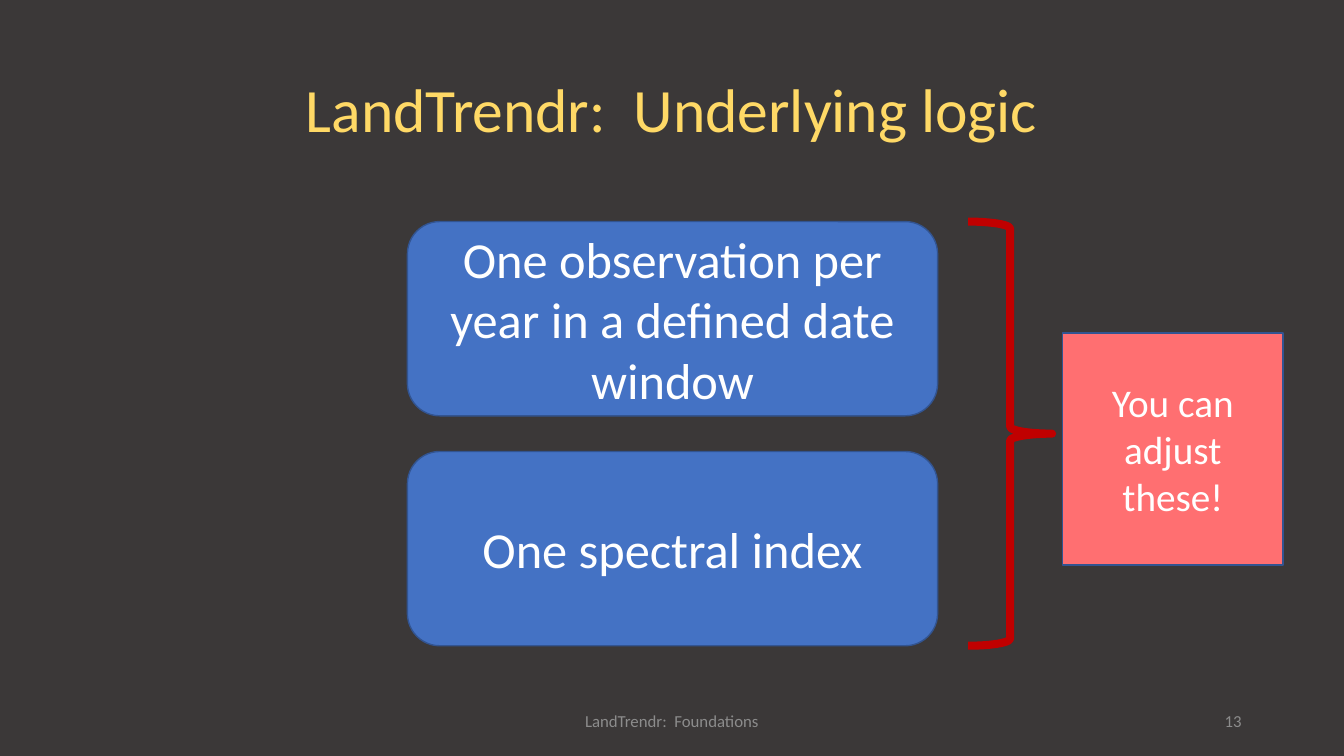
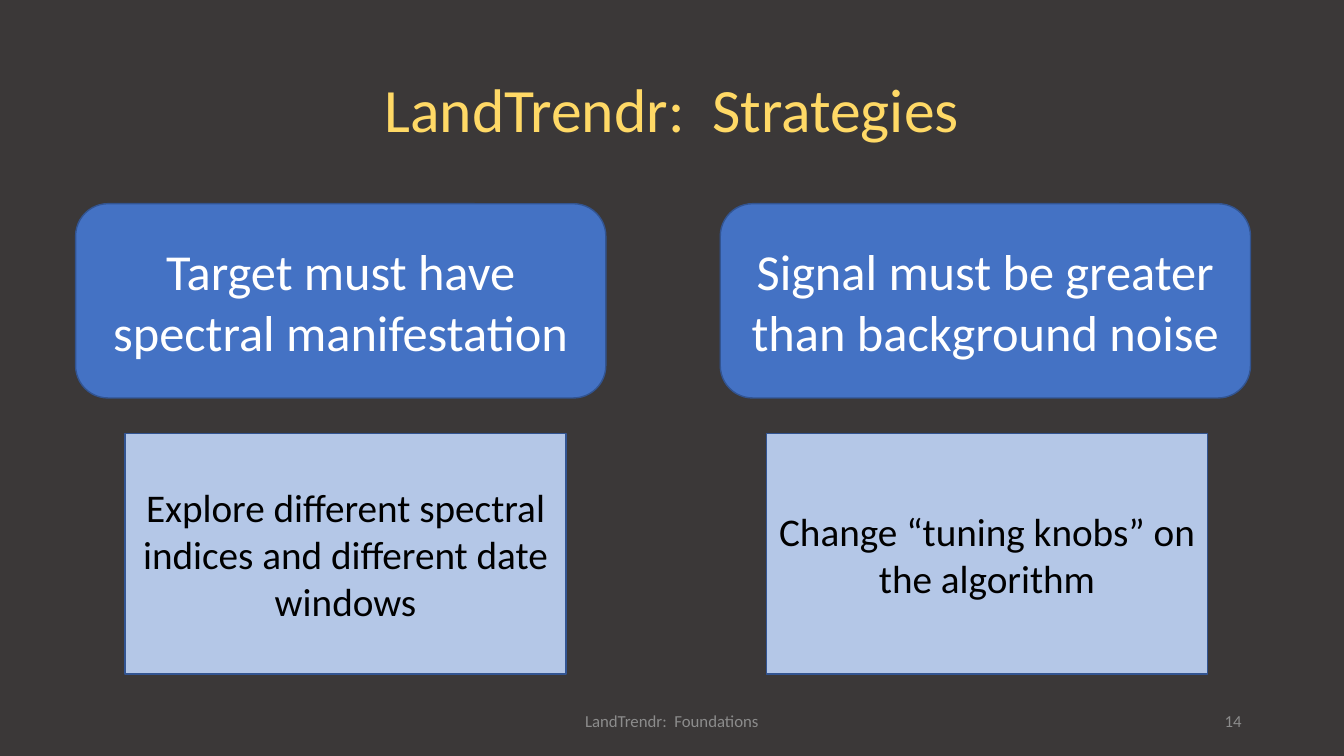
"""Build two LandTrendr slides: underlying logic and strategies."""
import dataclasses

import pptx
import pptx.dml.color
import pptx.enum.shapes
import pptx.enum.text
import pptx.util

EMU_PER_PX = 9525
SHAPE = pptx.enum.shapes.MSO_SHAPE
ALIGN = pptx.enum.text.PP_ALIGN
TITLE_ONLY_LAYOUT = 5
FIRST_NUMBER = 13
CARD_WIDTH, CARD_HEIGHT, CARD_GAP = 505, 185, 34
ADVICE_WIDTH, ADVICE_HEIGHT = 420, 229


@dataclasses.dataclass(frozen=True)
class Theme:
    """Hold the colours, font and type sizes of the slides."""
    font: str = "Calibri"
    background: str = "3B3838"
    title: str = "FFD966"
    footer: str = "8C8C8C"
    card: str = "4472C4"
    outline: str = "325491"
    advice: str = "B4C7E7"
    callout: str = "FF6F71"
    brace: str = "C00000"
    light_text: str = "FFFFFF"
    dark_text: str = "000000"
    title_size: int = 44
    card_size: int = 36
    note_size: int = 28
    footer_size: int = 12
    outline_width: float = 1
    brace_width: float = 5.75


THEME = Theme()


def px(length):
    """Turn pixels into EMU."""
    return pptx.util.Emu(length * EMU_PER_PX)


def rgb(value):
    """Turn a hex string into a colour."""
    return pptx.dml.color.RGBColor.from_string(value)


def write_text(shape, text, *, size, color, align=ALIGN.CENTER, line_spacing=None):
    """Write one formatted, vertically centred paragraph into a shape."""
    frame = shape.text_frame
    frame.word_wrap = True
    frame.vertical_anchor = pptx.enum.text.MSO_ANCHOR.MIDDLE
    paragraph = frame.paragraphs[0]
    paragraph.alignment = align
    paragraph.line_spacing = line_spacing
    run = paragraph.add_run()
    run.text = text
    run.font.name = THEME.font
    run.font.size = pptx.util.Pt(size)
    run.font.color.rgb = rgb(color)


def add_shape(slide, kind, box, *, line, line_width, fill=None):
    """Add a preset shape without a shadow."""
    shape = slide.shapes.add_shape(kind, *map(px, box))
    shape.shadow.inherit = False
    if fill:
        shape.fill.solid()
        shape.fill.fore_color.rgb = rgb(fill)
    else:
        shape.fill.background()
    shape.line.color.rgb = rgb(line)
    shape.line.width = pptx.util.Pt(line_width)
    return shape


def add_card(slide, left, top, text):
    """Add a rounded card with a key statement."""
    card = add_shape(slide, SHAPE.ROUNDED_RECTANGLE, (left, top, CARD_WIDTH, CARD_HEIGHT),
                     fill=THEME.card, line=THEME.outline, line_width=THEME.outline_width)
    write_text(card, text, size=THEME.card_size, color=THEME.light_text)


def add_note(slide, box, text, *, fill, color):
    """Add a rectangular note."""
    note = add_shape(slide, SHAPE.RECTANGLE, box, fill=fill, line=THEME.outline,
                     line_width=THEME.outline_width)
    write_text(note, text, size=THEME.note_size, color=color)


def add_footer(slide, box, text, align):
    """Add a small footer text."""
    footer = slide.shapes.add_textbox(*map(px, box))
    write_text(footer, text, size=THEME.footer_size, color=THEME.footer, align=align)


def add_slide(presentation, title):
    """Add a slide with its title, footer and number."""
    slide = presentation.slides.add_slide(presentation.slide_layouts[TITLE_ONLY_LAYOUT])
    heading = slide.shapes.title
    heading.left, heading.top, heading.width, heading.height = map(px, (88, 38, 1104, 139))
    write_text(heading, title, size=THEME.title_size, color=THEME.title, line_spacing=0.9)
    number = FIRST_NUMBER + len(presentation.slides) - 1
    add_footer(slide, (424, 667, 432, 38), "LandTrendr:  Foundations", ALIGN.CENTER)
    add_footer(slide, (904, 667, 288, 38), str(number), ALIGN.RIGHT)
    return slide


def build_logic(presentation):
    """Build the slide on underlying logic."""
    slide = add_slide(presentation, "LandTrendr:  Underlying logic")
    top, step = 211, CARD_HEIGHT + CARD_GAP
    statements = ("One observation per year in a defined date window", "One spectral index")
    for index, statement in enumerate(statements):
        add_card(slide, 388, top + index * step, statement)
    add_shape(slide, SHAPE.RIGHT_BRACE, (922, top, 80, step + CARD_HEIGHT),
              line=THEME.brace, line_width=THEME.brace_width)
    add_note(slide, (1012, 317, 210, 221), "You can adjust these!",
             fill=THEME.callout, color=THEME.light_text)


def build_strategies(presentation):
    """Build the slide on strategies."""
    slide = add_slide(presentation, "LandTrendr:  Strategies")
    top = 194
    advice_top = top + CARD_HEIGHT + CARD_GAP
    columns = (
        (72, "Target must have spectral manifestation",
         119, "Explore different spectral indices and different date windows"),
        (686, "Signal must be greater than background noise",
         730, "Change “tuning knobs” on the algorithm"),
    )
    for card_left, statement, advice_left, advice in columns:
        add_card(slide, card_left, top, statement)
        add_note(slide, (advice_left, advice_top, ADVICE_WIDTH, ADVICE_HEIGHT), advice,
                 fill=THEME.advice, color=THEME.dark_text)


def main():
    """Build and save the presentation."""
    presentation = pptx.Presentation()
    presentation.slide_width, presentation.slide_height = px(1280), px(720)
    background = presentation.slide_master.background.fill
    background.solid()
    background.fore_color.rgb = rgb(THEME.background)
    build_logic(presentation)
    build_strategies(presentation)
    presentation.save("out.pptx")


if __name__ == "__main__":
    main()
